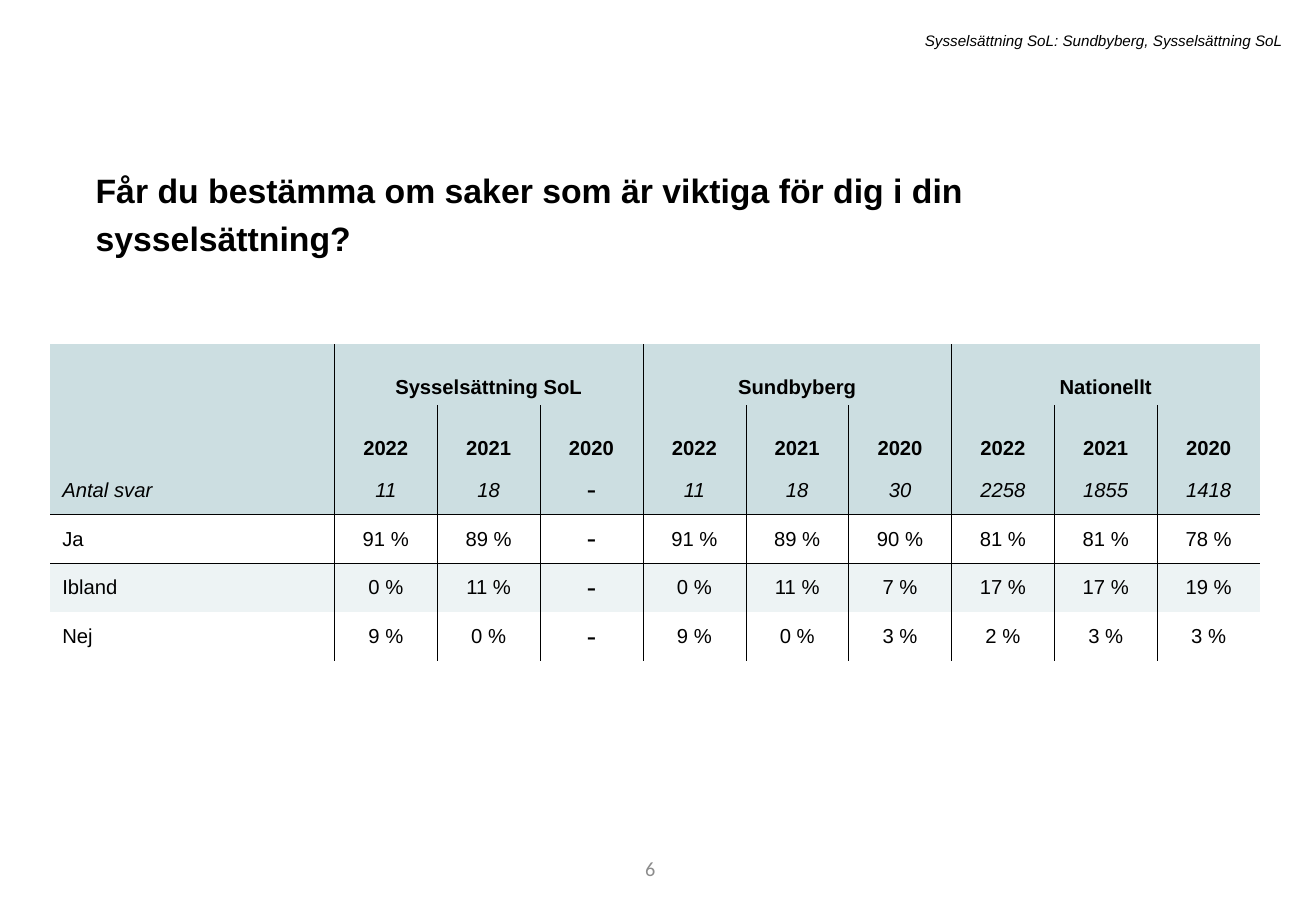
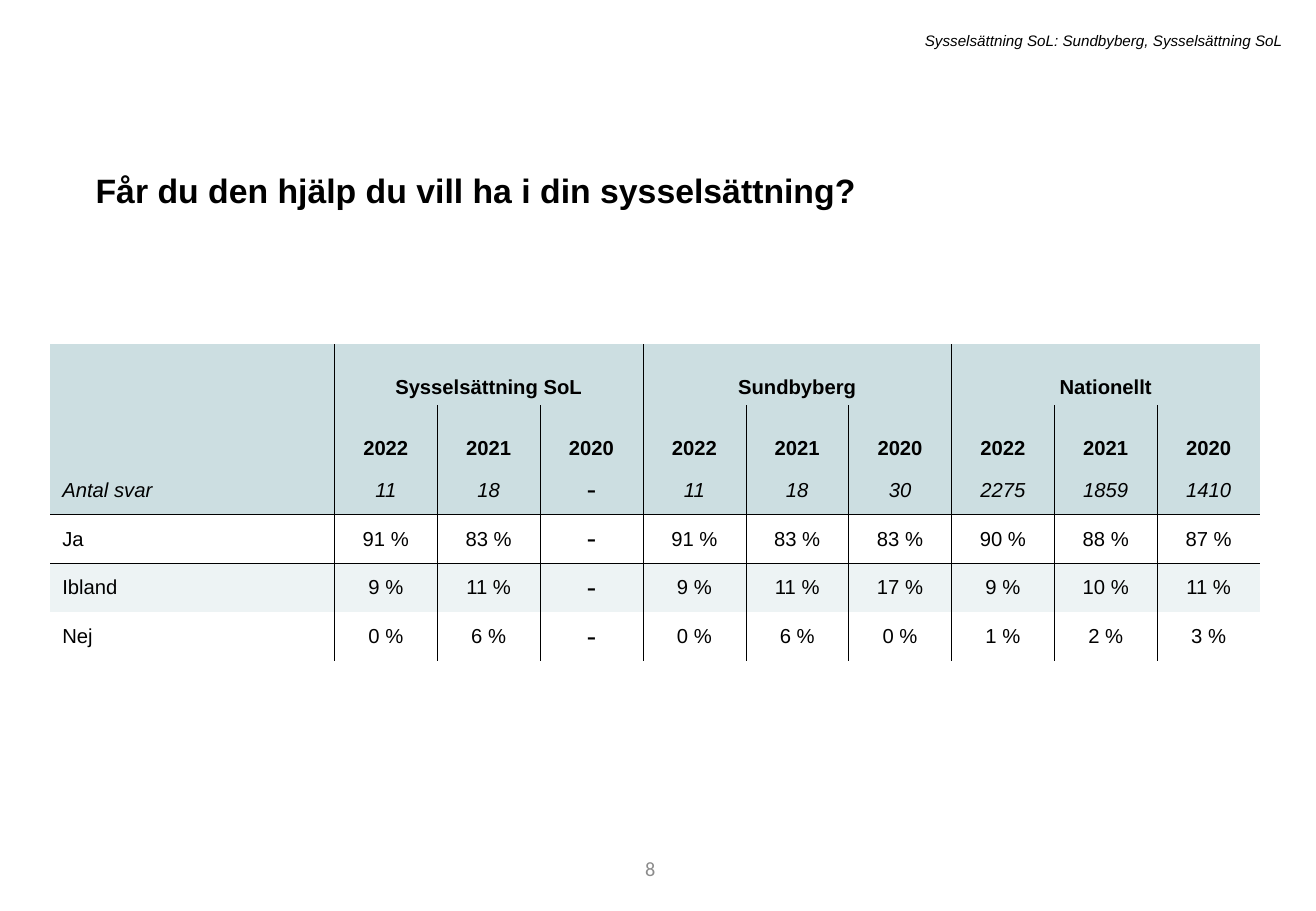
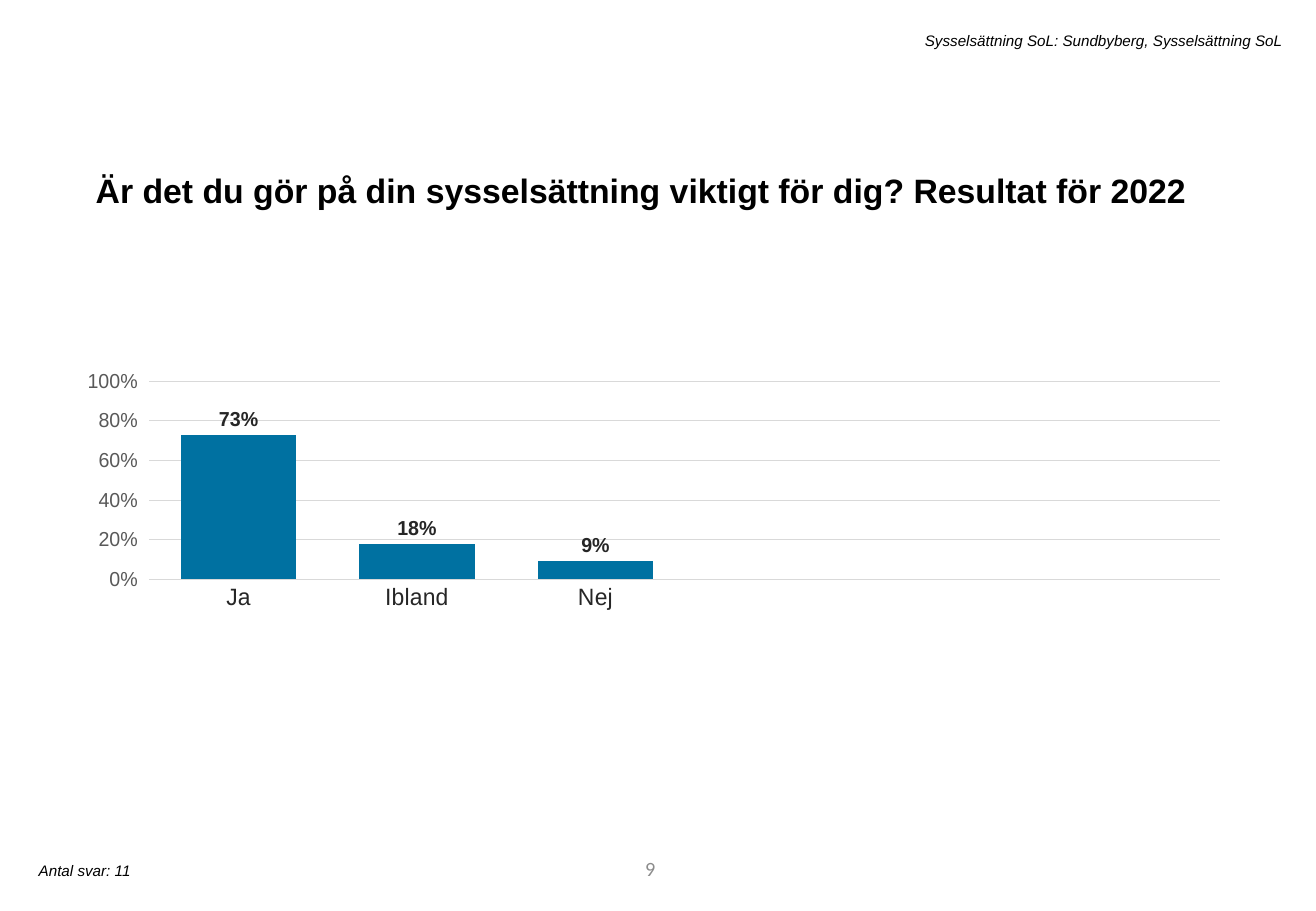
import dataclasses

import pptx
import pptx.chart.data
import pptx.dml.color
import pptx.enum.chart
import pptx.enum.text
import pptx.oxml
import pptx.oxml.ns
import pptx.util

Cm = pptx.util.Cm
ALIGN = pptx.enum.text.PP_ALIGN
ANCHOR = pptx.enum.text.MSO_ANCHOR


@dataclasses.dataclass(frozen=True)
class Theme:
    font: str = "Arial"
    number_font: str = "Calibri"
    black: str = "000000"
    page_grey: str = "8C8C8C"
    header_fill: str = "CCDEE1"
    band_fill: str = "EDF3F4"
    bar: str = "0071A1"
    grid: str = "D9D9D9"
    label_dark: str = "262626"
    label_grey: str = "595959"
    title_size: int = 20
    dash_size: int = 18
    category_size: int = 14
    body_size: int = 12
    note_size: int = 9
    table_line: float = 0.25
    chart_line: float = 0.75


THEME = Theme()
RUNNING_HEAD = "Sysselsättning SoL: Sundbyberg, Sysselsättning SoL"
GROUPS = ["Sysselsättning SoL", "Sundbyberg", "Nationellt"]
YEARS = ["2022", "2021", "2020"]
ANSWERS = ["Ja", "Ibland", "Nej"]
MISSING = "-"
HEADER_ROWS = 3
NO_STYLE_NO_GRID = "{2D5ABB26-0587-4C30-8999-92F81FD0307C}"

IMPORTANT_COUNTS = [11, 18, None, 11, 18, 30, 2258, 1855, 1418]
IMPORTANT_SHARES = [
    [91, 89, None, 91, 89, 90, 81, 81, 78],
    [0, 11, None, 0, 11, 7, 17, 17, 19],
    [9, 0, None, 9, 0, 3, 2, 3, 3],
]
HELP_COUNTS = [11, 18, None, 11, 18, 30, 2275, 1859, 1410]
HELP_SHARES = [
    [91, 83, None, 91, 83, 83, 90, 88, 87],
    [9, 11, None, 9, 11, 17, 9, 10, 11],
    [0, 6, None, 0, 6, 0, 1, 2, 3],
]


def rgb(value):
    return pptx.dml.color.RGBColor.from_string(value)


def style_font(font, size=THEME.body_size, color=THEME.black, name=THEME.font,
               bold=False, italic=False):
    font.size = pptx.util.Pt(size)
    font.color.rgb = rgb(color)
    font.name = name
    font.bold = bold
    font.italic = italic


def write_text(text_frame, text, align=ALIGN.LEFT, line_spacing=None,
               space_before=None, **font_format):
    paragraph = text_frame.paragraphs[0]
    paragraph.alignment = align
    if line_spacing is not None:
        paragraph.line_spacing = line_spacing
    if space_before is not None:
        paragraph.space_before = pptx.util.Pt(space_before)
    run = paragraph.add_run()
    run.text = text
    style_font(run.font, **font_format)


def add_text(slide, text, left, top, width, height, anchor=ANCHOR.TOP, **text_format):
    """Add a wrapping text box; the position is in centimetres."""
    box = slide.shapes.add_textbox(Cm(left), Cm(top), Cm(width), Cm(height))
    box.text_frame.word_wrap = True
    box.text_frame.vertical_anchor = anchor
    write_text(box.text_frame, text, **text_format)


def add_note(slide, text, left, top, width, align=ALIGN.LEFT):
    add_text(slide, text, left, top, width, 0.64, align=align,
             size=THEME.note_size, italic=True)


def add_question_slide(presentation, title, page):
    """Add a blank slide with the shared running head, title and page number."""
    slide = presentation.slides.add_slide(presentation.slide_layouts[6])
    add_note(slide, RUNNING_HEAD, 4.55, 0.53, 22.5, align=ALIGN.RIGHT)
    add_text(slide, title, 1.75, 3.25, 23.88, 1.2, line_spacing=1.2,
             space_before=10, size=THEME.title_size, bold=True)
    add_text(slide, str(page), 7.75, 17.65, 6.2, 1.02, anchor=ANCHOR.MIDDLE,
             align=ALIGN.RIGHT, color=THEME.page_grey, name=THEME.number_font)
    return slide


def draw_borders(cell, sides):
    """Line the given sides, named in the schema order L, R, T, B."""
    properties = cell._tc.get_or_add_tcPr()
    for side in sides:
        properties.append(pptx.oxml.parse_xml(
            f'<a:ln{side} {pptx.oxml.ns.nsdecls("a")} '
            f'w="{pptx.util.Pt(THEME.table_line)}"><a:solidFill>'
            f'<a:srgbClr val="{THEME.black}"/></a:solidFill></a:ln{side}>'))


def has_divider(row, edge):
    """Tell whether a vertical line runs left of column `edge` in this row."""
    starts_group = edge % len(YEARS) == 1
    return 1 <= edge <= len(GROUPS) * len(YEARS) and (row > 0 or starts_group)


def format_cell(cell, row, column):
    borders = {
        "L": has_divider(row, column),
        "R": has_divider(row, column + 1),
        "T": row == HEADER_ROWS,
        "B": row == HEADER_ROWS - 1,
    }
    draw_borders(cell, [side for side, drawn in borders.items() if drawn])
    fill = THEME.header_fill if row < HEADER_ROWS else THEME.band_fill
    if row < HEADER_ROWS or (row - HEADER_ROWS) % 2:
        cell.fill.solid()
        cell.fill.fore_color.rgb = rgb(fill)
    else:
        cell.fill.background()
    cell.vertical_anchor = ANCHOR.BOTTOM if row < HEADER_ROWS - 1 else ANCHOR.MIDDLE


def fill_cell(cell, text, row, column):
    align = ALIGN.CENTER if column else ALIGN.LEFT
    if text == MISSING:
        write_text(cell.text_frame, text, align=align, size=THEME.dash_size,
                   name=THEME.number_font)
    elif text:
        write_text(cell.text_frame, text, align=align,
                   bold=row < HEADER_ROWS - 1, italic=row == HEADER_ROWS - 1)


def labelled_row(label, values, pattern):
    return [label] + [MISSING if value is None else pattern.format(value)
                      for value in values]


def add_result_table(slide, counts, shares):
    group_row = [""]
    for group in GROUPS:
        group_row += [group] + [""] * (len(YEARS) - 1)
    rows = [group_row, [""] + YEARS * len(GROUPS),
            labelled_row("Antal svar", counts, "{}")]
    rows += [labelled_row(answer, values, "{} %")
             for answer, values in zip(ANSWERS, shares)]

    label_width, value_width = Cm(5.94), Cm(2.15)
    heights = [Cm(1.27)] * 2 + [Cm(1.02)] * (len(rows) - 2)
    table_frame = slide.shapes.add_table(
        len(rows), len(group_row), Cm(1.05), Cm(7.2),
        label_width + value_width * len(counts), sum(heights))
    table = table_frame.table
    table._tbl.tblPr.find(pptx.oxml.ns.qn("a:tableStyleId")).text = NO_STYLE_NO_GRID
    table.first_row = table.horz_banding = False
    for index, column in enumerate(table.columns):
        column.width = value_width if index else label_width
    for start in range(1, len(group_row), len(YEARS)):
        table.cell(0, start).merge(table.cell(0, start + len(YEARS) - 1))
    for row, texts in enumerate(rows):
        table.rows[row].height = heights[row]
        for column, text in enumerate(texts):
            cell = table.cell(row, column)
            format_cell(cell, row, column)
            fill_cell(cell, text, row, column)


def place_plot(chart, **fractions):
    """Fix the inner plot area as fractions of the chart frame."""
    plot_area = chart.element.find(".//" + pptx.oxml.ns.qn("c:plotArea"))
    for layout in plot_area.findall(pptx.oxml.ns.qn("c:layout")):
        plot_area.remove(layout)
    values = "".join(f'<c:{key} val="{value}"/>' for key, value in fractions.items())
    plot_area.insert(0, pptx.oxml.parse_xml(
        f'<c:layout {pptx.oxml.ns.nsdecls("c")}><c:manualLayout>'
        '<c:layoutTarget val="inner"/><c:xMode val="edge"/><c:yMode val="edge"/>'
        f'{values}</c:manualLayout></c:layout>'))


def style_line(line):
    line.color.rgb = rgb(THEME.grid)
    line.width = pptx.util.Pt(THEME.chart_line)


def style_axes(chart):
    category_axis, value_axis = chart.category_axis, chart.value_axis
    category_axis.major_tick_mark = pptx.enum.chart.XL_TICK_MARK.NONE
    style_line(category_axis.format.line)
    style_font(category_axis.tick_labels.font, size=THEME.category_size,
               color=THEME.label_dark)

    value_axis.minimum_scale, value_axis.maximum_scale = 0, 1
    value_axis.major_unit = 0.2
    value_axis.format.line.fill.background()
    style_line(value_axis.major_gridlines.format.line)
    value_axis.tick_labels.number_format = "0%"
    value_axis.tick_labels.number_format_is_linked = False
    style_font(value_axis.tick_labels.font, color=THEME.label_grey)


def add_share_chart(slide, shares, slots=6):
    """Add a column chart that leaves the unused slots on the right empty."""
    empty = slots - len(shares)
    data = pptx.chart.data.CategoryChartData(number_format="0%")
    data.categories = ANSWERS + [""] * empty
    data.add_series("Andel", shares + [None] * empty)
    chart = slide.shapes.add_chart(
        pptx.enum.chart.XL_CHART_TYPE.COLUMN_CLUSTERED,
        Cm(1.83), Cm(6.43), Cm(23.88), Cm(10.03), data).chart
    chart.has_legend = chart.has_title = False
    style_font(chart.font)
    style_axes(chart)
    place_plot(chart, x=0.025, y=0.154, w=0.966, h=0.413)

    plot = chart.plots[0]
    plot.gap_width = 55
    plot.vary_by_categories = False
    bars = plot.series[0].format.fill
    bars.solid()
    bars.fore_color.rgb = rgb(THEME.bar)
    plot.has_data_labels = True
    labels = plot.data_labels
    labels.show_value = True
    labels.position = pptx.enum.chart.XL_LABEL_POSITION.OUTSIDE_END
    labels.number_format = "0%"
    labels.number_format_is_linked = False
    style_font(labels.font, color=THEME.label_dark, bold=True)


def main():
    presentation = pptx.Presentation()
    presentation.slide_width = Cm(27.51)
    presentation.slide_height = Cm(19.05)

    slide = add_question_slide(
        presentation,
        "Får du bestämma om saker som är viktiga för dig i din sysselsättning?", 6)
    add_result_table(slide, IMPORTANT_COUNTS, IMPORTANT_SHARES)

    slide = add_question_slide(
        presentation, "Får du den hjälp du vill ha i din sysselsättning?", 8)
    add_result_table(slide, HELP_COUNTS, HELP_SHARES)

    slide = add_question_slide(
        presentation,
        "Är det du gör på din sysselsättning viktigt för dig? Resultat för 2022", 9)
    add_share_chart(slide, [0.73, 0.18, 0.09])
    add_note(slide, "Antal svar: 11", 0.56, 17.88, 7.57)

    presentation.save("out.pptx")


if __name__ == "__main__":
    main()
